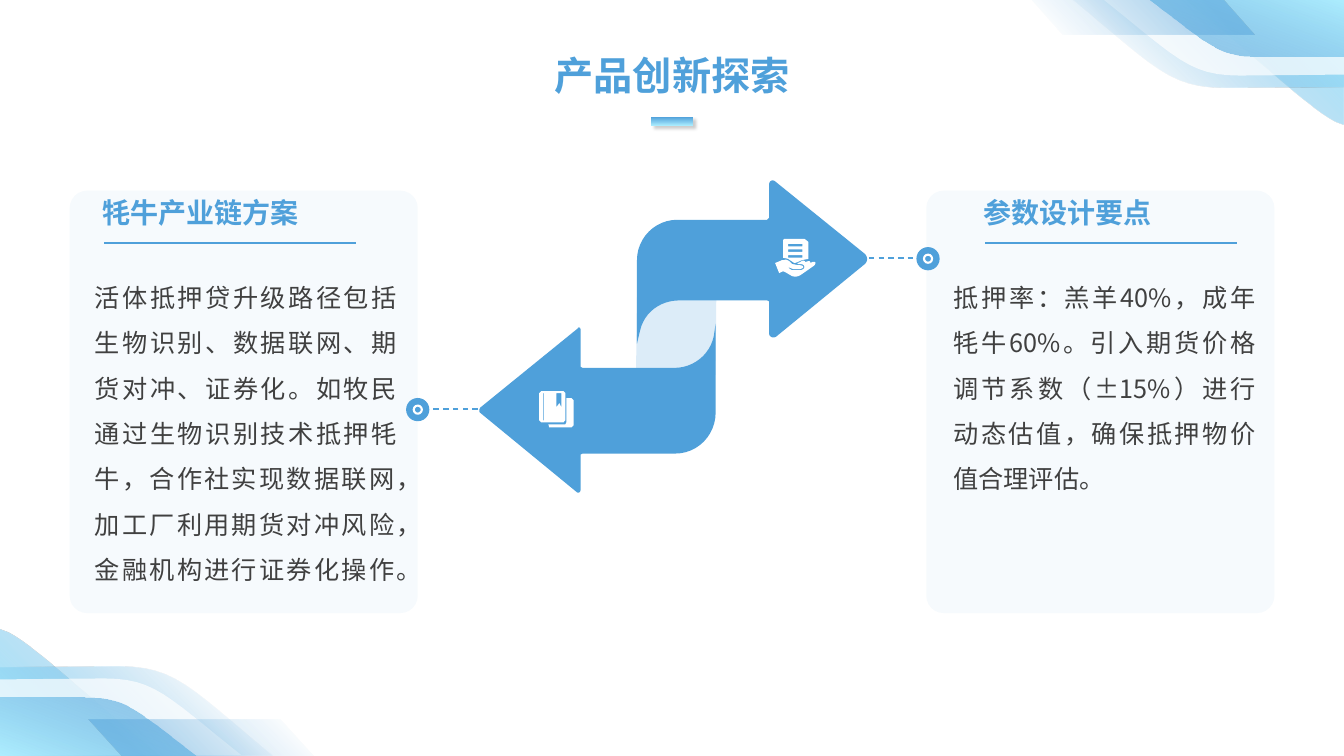
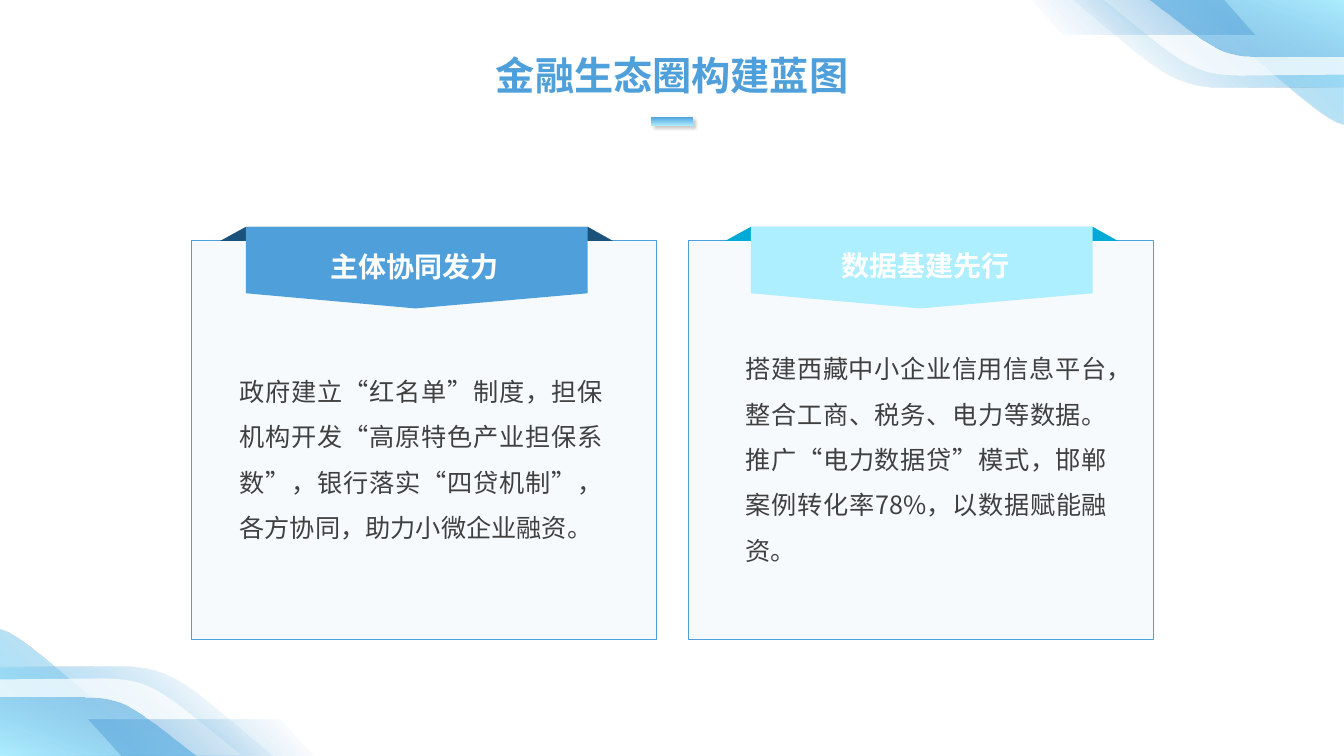
"""Build two slides on livestock-backed finance with shared corner waves and titles."""
from lxml import etree
from pptx import Presentation
from pptx.dml.color import RGBColor
from pptx.enum.dml import MSO_LINE
from pptx.enum.shapes import MSO_CONNECTOR, MSO_SHAPE
from pptx.enum.text import MSO_ANCHOR, PP_ALIGN
from pptx.oxml.ns import qn
from pptx.util import Pt

RECTANGLE, ROUNDED = MSO_SHAPE.RECTANGLE, MSO_SHAPE.ROUNDED_RECTANGLE
ELLIPSE, PARALLELOGRAM = MSO_SHAPE.OVAL, MSO_SHAPE.PARALLELOGRAM
STRAIGHT, DASH, SOLID = MSO_CONNECTOR.STRAIGHT, MSO_LINE.DASH, MSO_LINE.SOLID
TOP, MIDDLE = MSO_ANCHOR.TOP, MSO_ANCHOR.MIDDLE
LEFT, CENTER, JUSTIFY = PP_ALIGN.LEFT, PP_ALIGN.CENTER, PP_ALIGN.JUSTIFY

FONT = "Noto Sans CJK SC"
BLUE, CYAN, WHITE, GREY = "4FA0DA", "ADEEFF", "FFFFFF", "404040"
PALE_BLUE, DARK_BLUE, DARK_CYAN = "DCECF8", "1A527B", "00AAD6"
WIDTH, HEIGHT = 960, 540
CURVE_STEPS = 12


def paint(color, colour, opacity=100):
    """Give a colour format a hex colour and an opacity in percent."""
    color.rgb = RGBColor.from_string(colour)
    if opacity < 100:
        etree.SubElement(color._xFill[0], qn("a:alpha"), val=str(opacity * 1000))


def draw_outline(slide, outline, colour=WHITE, opacity=100):
    """Draw an outline of M, L, C and Z commands, with coordinates in points."""
    builder = None
    numbers = []
    for token in outline.split():
        if token in "MLC":
            command = token
            continue
        if token == "Z":
            builder.add_line_segments([], close=True)
            continue
        numbers.append(float(token))
        if len(numbers) < (6 if command == "C" else 2):
            continue
        points = list(zip(numbers[::2], numbers[1::2]))
        end_x, end_y = map(Pt, points[-1])
        if command == "M" and builder is None:
            builder = slide.shapes.build_freeform(end_x, end_y)
        elif command == "M":
            builder.move_to(end_x, end_y)
        elif command == "L":
            builder.add_line_segments([(end_x, end_y)], close=False)
        else:
            controls = [start, *points]
            curve = []
            for step in range(1, CURVE_STEPS + 1):
                t = step / CURVE_STEPS
                weights = ((1 - t) ** 3, 3 * t * (1 - t) ** 2, 3 * t * t * (1 - t), t ** 3)
                curve.append([
                    Pt(sum(weight * control[axis] for weight, control in zip(weights, controls)))
                    for axis in (0, 1)])
            builder.add_line_segments(curve, close=False)
        start = points[-1]
        numbers = []
    shape = builder.convert_to_shape()
    shape.shadow.inherit = False
    shape.line.fill.background()
    shape.fill.solid()
    paint(shape.fill.fore_color, colour, opacity)
    return shape


presentation = Presentation()
presentation.slide_width, presentation.slide_height = Pt(WIDTH), Pt(HEIGHT)
blank_layout = presentation.slide_layouts[6]
product_slide, ecosystem_slide = [presentation.slides.add_slide(blank_layout) for _ in range(2)]

waves = [
    ("M 960 88.6 L 960 -1.4 L 846 -1.4 C 910 51.8 936 77 954 86.4 Z",
     [(0, BLUE, 0), (95, CYAN, 100)], 45),
    ("M 765.4 -0.7 C 825.8 49 835.2 62.6 875.5 62.6 L 960 61.9 L 960 -0.7 Z",
     [(19, BLUE, 0), (100, CYAN, 100)], 45),
    ("M 787.7 -0.7 C 841 41.8 849.6 54 885.6 54 L 960 53.3 L 960 -0.7 Z", None, 0),
    ("M 819.4 -0.7 C 863.3 31.7 869.8 40.3 899.3 40.3 L 960 40.3 L 960 -0.7 Z",
     [(0, BLUE, 57), (100, CYAN, 100)], 70),
]
slanted_band = (735.8, -1.4, 160.6, 25.9)
title_bar = (465, 83.5, 30.2, 6.5)

for slide in (product_slide, ecosystem_slide):
    gradients = []
    for rotation in (0, 180):
        corner = []
        for outline, stops, angle in waves:
            shape = draw_outline(slide, outline, WHITE, 70)
            corner.append(shape)
            if stops:
                gradients.append((shape, stops, angle))
        band = slide.shapes.add_shape(PARALLELOGRAM, *map(Pt, slanted_band))
        band.adjustments[0] = 0.92
        band._element.spPr.xfrm.set("flipV", "1")
        corner.append(band)
        gradients.append((band, [(8, BLUE, 0), (79, BLUE, 45)], 315))
        if rotation:
            for shape in corner:
                shape.rotation = rotation
                shape.left = Pt(WIDTH) - shape.left - shape.width
                shape.top = Pt(HEIGHT - 1.4) - shape.top - shape.height
    bar = slide.shapes.add_shape(RECTANGLE, *map(Pt, title_bar))
    gradients.append((bar, [(0, BLUE, 100), (100, CYAN, 100)], 270))
    for shape, stops, angle in gradients:
        shape.shadow.inherit = False
        shape.line.fill.background()
        shape.fill.gradient()
        shape.fill.gradient_angle = angle
        for gradient_stop, (position, colour, opacity) in zip(shape.fill.gradient_stops, stops):
            gradient_stop.position = position / 100
            paint(gradient_stop.color, colour, opacity)
    effects = bar._element.spPr.find(qn("a:effectLst"))
    shadow = etree.SubElement(effects, qn("a:outerShdw"), blurRad=str(Pt(2)), dist=str(Pt(3)),
                              dir="2700000", algn="tl", rotWithShape="0")
    shadow_colour = etree.SubElement(shadow, qn("a:srgbClr"), val="000000")
    etree.SubElement(shadow_colour, qn("a:alpha"), val="20000")

styles = {
    "title": ({"size": Pt(28), "bold": True}, {"alignment": CENTER}, BLUE, TOP),
    "heading": ({"size": Pt(20), "bold": True}, {"alignment": LEFT}, BLUE, TOP),
    "banner": ({"size": Pt(20), "bold": True}, {"alignment": CENTER}, WHITE, MIDDLE),
    "body": ({"size": Pt(18)}, {"alignment": JUSTIFY, "line_spacing": 1.5}, GREY, TOP),
    "card": ({"size": Pt(18)}, {"alignment": JUSTIFY, "line_spacing": 1.5}, GREY, MIDDLE),
}
title_box = (68.2, 33.3, 823.7, 41)
texts = [
    (product_slide, "title", "产品创新探索", title_box),
    (ecosystem_slide, "title", "金融生态圈构建蓝图", title_box),
]
presets = []
lines = []
outlines = []

columns = [
    (49.8, 66.2, 60.5, (298.4, 292.6), (341.3, 306.7), "牦牛产业链方案",
     "活体抵押贷升级路径包括生物识别、数据联网、期货对冲、证券化。如牧民通过生物识别技术抵押牦牛，"
     "合作社实现数据联网，加工厂利用期货对冲风险，金融机构进行证券化操作。"),
    (661.7, 695.2, 673.9, (662.9, 184.8), (620.6, 655.2), "参数设计要点",
     "抵押率：羔羊40%，成年牦牛60%。引入期货价格调节系数（±15%）进行动态估值，确保抵押物价值合理评估。"),
]
for panel_left, heading_left, body_left, (dot_x, dot_y), (dash_start, dash_end), heading, body in columns:
    presets.append((product_slide, ROUNDED, (panel_left, 136.2, 248.6, 301.7), BLUE, 5, None, 0))
    for diameter, border, border_width in ((16.6, None, 0), (5.8, WHITE, 1.5)):
        dot = (dot_x - diameter / 2, dot_y - diameter / 2, diameter, diameter)
        presets.append((product_slide, ELLIPSE, dot, BLUE, 100, border, border_width))
    rule_left = heading_left + 8.4
    lines.append((product_slide, (rule_left, 173.9, rule_left + 180, 173.9), 1.5, SOLID))
    lines.append((product_slide, (dash_start, dot_y - 0.5, dash_end, dot_y - 0.5), 1, DASH))
    texts.append((product_slide, "heading", heading, (heading_left, 136.1, 204.5, 31.7)))
    texts.append((product_slide, "body", body, (body_left, 187.2, 230.1, 106.6)))

ribbon_fold = "M 454.3 270 L 511.2 267.8 L 511.9 184.3 L 455 212.4 Z"
right_arrow = (
    "M 547.9 157 L 483.8 157 C 468 157 455 170 455 185.8 L 455 245.5 L 457.2 236.2 "
    "C 460.1 223.2 471.6 214.6 485.3 214.6 L 547.9 214.6 L 549.4 215.3 L 549.4 238.3 "
    "C 549.4 240.5 552.2 241.9 554.4 240.5 L 617.8 188.6 C 619.9 186.5 619.9 183.6 617.8 181.4 "
    "L 553.7 129.6 C 552.2 128.2 549.4 128.9 549.4 131.8 L 549.4 155.5 Z")
left_arrow = (
    "M 509.8 240.5 C 506.9 253.4 495.4 262.8 481.7 262.8 L 416.2 262.8 L 414.7 262.1 L 414.7 235.4 "
    "C 414.7 234 413.3 233.3 412.6 234.7 L 343.4 290.9 C 342 292.3 342 294.5 343.4 295.2 "
    "L 411.8 351.4 C 413.3 352.8 414.7 351.4 414.7 349.9 L 414.7 324.7 L 416.2 324 L 482.4 324 "
    "C 498.2 324 511.2 311 511.2 294.5 L 511.2 231.1 Z")
book_icon = (
    "M 408.2 284.4 L 404.6 284.4 L 404.6 301.7 L 403.9 303.1 L 391.7 303.1 L 392.4 305.3 "
    "L 408.2 305.3 L 409.7 303.8 L 409.7 285.8 Z "
    "M 402.5 301.7 L 403.9 300.2 L 403.9 280.8 L 402.5 279.4 L 386.6 279.4 L 385.2 280.8 "
    "L 385.2 300.2 L 386.6 301.7 Z "
    "M 397.4 280.8 L 401 280.8 L 401 290.9 L 399.6 288 L 397.4 290.9 Z "
    "M 388.1 280.8 L 388.8 280.8 L 388.8 300.2 L 388.1 300.2 Z")
hand_icon = (
    "M 560.2 185.8 C 561.6 185 562.3 185.8 563.8 186.5 L 565.9 188.6 L 570.2 189.4 "
    "C 573.1 189.4 573.8 190.1 573.8 190.8 C 573.8 191.5 571.7 192.2 571.7 192.2 L 566.6 192.2 "
    "L 563 190.8 C 563 190.8 564.5 193 566.6 193 L 571.7 193 C 572.4 193 574.6 192.2 574.6 190.8 "
    "C 574.6 188.6 572.4 188.6 570.2 188.6 L 569.5 188 L 571.7 187.2 "
    "C 573.1 185.8 574.6 185.8 575.3 187.2 L 577.4 186.5 C 578.2 186.5 578.9 186.5 578.9 187.9 "
    "C 581 186.5 581.8 187.2 582.5 187.2 C 582.5 187.9 582.5 189.4 581 190.1 L 571.7 196.6 "
    "C 570.2 197.3 568.8 198 565.9 197.3 L 560.9 194.4 C 559.4 193.7 559.4 193.7 558 194.4 "
    "L 556.6 195.1 L 553.7 187.9 L 558.7 185.8 Z")
sheet_icon = (
    "M 560.2 170.6 L 574.6 170.6 L 577.4 172.8 L 577.4 185 L 573.1 185.8 "
    "C 571 186.5 568.8 187.9 567.4 187.9 L 563 185 C 560.9 184.3 559.4 184.3 559.4 184.3 L 559.4 171.4 Z")
for text_line in range(3):
    top = 174.2 + 4 * text_line
    sheet_icon += f" M 563 {top} L 563 {top + 1.8} L 573.1 {top + 1.8} L 573.1 {top} Z"
for outline, colour in ((ribbon_fold, PALE_BLUE), (right_arrow, BLUE), (left_arrow, BLUE),
                        (book_icon, WHITE), (hand_icon, WHITE), (sheet_icon, WHITE)):
    outlines.append((product_slide, outline, colour))

cards = [
    (136.8, 175.7, (171.4, 174.7), (164, 273.6), BLUE, DARK_BLUE, "主体协同发力",
     "政府建立“红名单”制度，担保机构开发“高原特色产业担保系数”，银行落实“四贷机制”，各方协同，助力小微企业融资。"),
    (491.8, 536.4, (536.8, 174), (525.6, 272.4), CYAN, DARK_CYAN, "数据基建先行",
     "搭建西藏中小企业信用信息平台，整合工商、税务、电力等数据。推广“电力数据贷”模式，"
     "邯郸案例转化率78%，以数据赋能融资。"),
]
for card_left, banner_left, heading_corner, (body_left, body_width), colour, fold_colour, heading, body in cards:
    banner_right = banner_left + 244.1
    fold = (f"M {banner_left} 162 L {banner_right} 162 L {banner_right + 18} 172.1 "
            f"L {banner_left - 18.4} 172.1 Z")
    banner = (f"M {banner_left} 162 L {banner_right} 162 L {banner_right} 209.5 "
              f"L {banner_left + 121} 220.3 L {banner_left} 209.5 Z")
    presets.append((ecosystem_slide, RECTANGLE, (card_left, 172.1, 331.9, 284.4), BLUE, 5, BLUE, 0.75))
    outlines.append((ecosystem_slide, fold, fold_colour))
    outlines.append((ecosystem_slide, banner, colour))
    texts.append((ecosystem_slide, "banner", heading, (*heading_corner, 249.1, 31.7)))
    texts.append((ecosystem_slide, "card", body, (body_left, 255.1, body_width, 135.4)))

for slide, kind, box, colour, opacity, border, border_width in presets:
    shape = slide.shapes.add_shape(kind, *map(Pt, box))
    shape.shadow.inherit = False
    shape.fill.solid()
    paint(shape.fill.fore_color, colour, opacity)
    if kind == ROUNDED:
        shape.adjustments[0] = 0.05
    if border:
        paint(shape.line.color, border)
        shape.line.width = Pt(border_width)
    else:
        shape.line.fill.background()

for slide, outline, colour in outlines:
    draw_outline(slide, outline, colour)

for slide, ends, width, dash in lines:
    connector = slide.shapes.add_connector(STRAIGHT, *map(Pt, ends))
    paint(connector.line.color, BLUE)
    connector.line.width = Pt(width)
    connector.line.dash_style = dash
    etree.SubElement(connector._element.spPr, qn("a:effectLst"))

for slide, style, text, box in texts:
    font_format, paragraph_format, colour, anchor = styles[style]
    frame = slide.shapes.add_textbox(*map(Pt, box)).text_frame
    frame.word_wrap = True
    frame.vertical_anchor = anchor
    paragraph = frame.paragraphs[0]
    run = paragraph.add_run()
    run.text = text
    run.font.name = FONT
    paint(run.font.color, colour)
    etree.SubElement(run.font._element, qn("a:ea"), typeface=FONT)
    for target, format_values in ((run.font, font_format), (paragraph, paragraph_format)):
        for name, value in format_values.items():
            setattr(target, name, value)

presentation.save("out.pptx")
